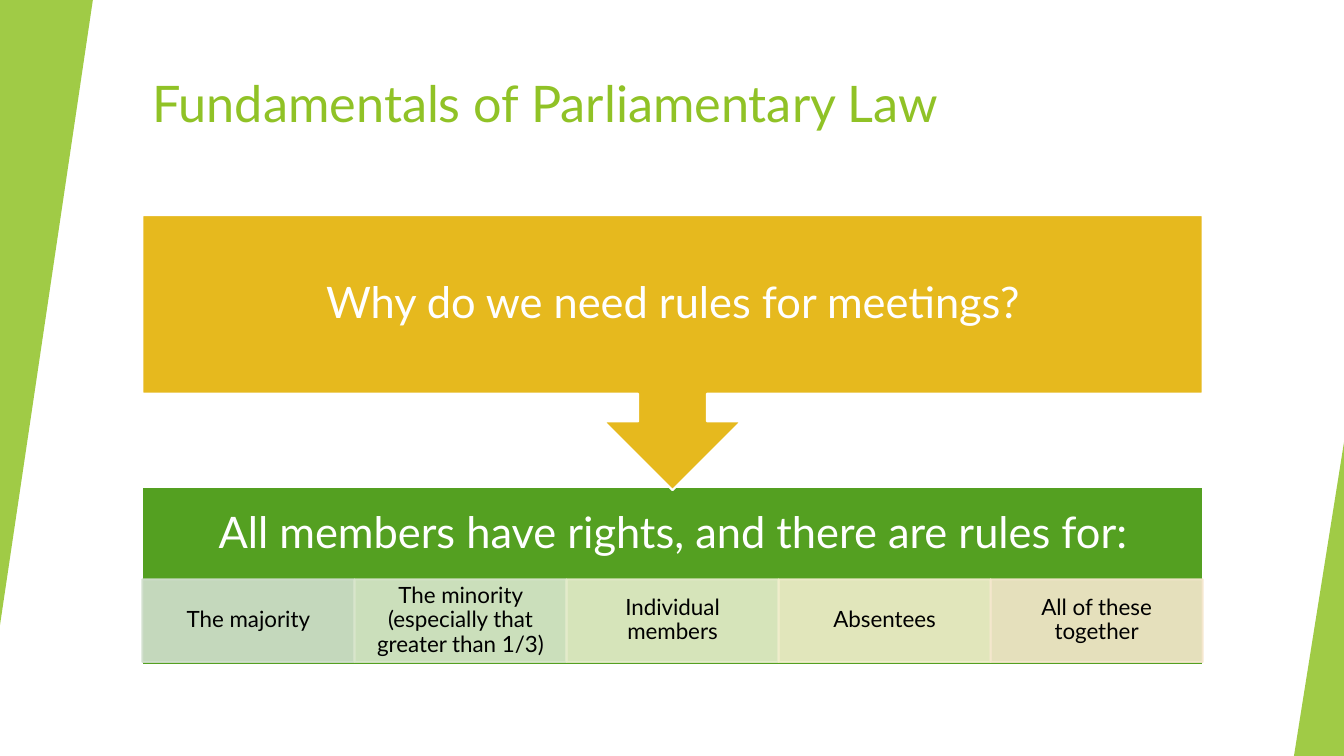
from pptx import Presentation
from pptx.dml.color import RGBColor
from pptx.enum.shapes import MSO_SHAPE as SHAPE
from pptx.enum.text import MSO_ANCHOR as ANCHOR, PP_ALIGN as ALIGN
from pptx.oxml.ns import qn
from pptx.util import Cm, Pt
from lxml import etree

LIME = RGBColor(0x90, 0xC2, 0x26)
GREEN = RGBColor(0x54, 0xA0, 0x21)
GOLD = RGBColor(0xE6, 0xB9, 0x1E)
WHITE = RGBColor(0xFF, 0xFF, 0xFF)
BLACK = RGBColor(0x00, 0x00, 0x00)
FONT = "Lato"

prs = Presentation()
prs.slide_width, prs.slide_height = Cm(33.87), Cm(19.05)
s = prs.slides.add_slide(prs.slide_layouts[5])


def add_filled(kind, x, y, w, h, fill, line=None, opacity=100):
    sp = s.shapes.add_shape(kind, Cm(x), Cm(y), Cm(w), Cm(h))
    sp.shadow.inherit = False
    sp.fill.solid()
    sp.fill.fore_color.rgb = fill
    if line is None:
        sp.line.fill.background()
    else:
        sp.line.color.rgb = line
        sp.line.width = Pt(1.5)
    if opacity < 100:
        for clr in sp._element.spPr.iter(qn("a:srgbClr")):
            etree.SubElement(clr, qn("a:alpha"), val=str(opacity * 1000))
    return sp


def write_text(sp, text, size, color, side, top, bottom):
    tf = sp.text_frame
    tf.word_wrap = True
    tf.vertical_anchor = ANCHOR.MIDDLE
    tf.margin_left = tf.margin_right = Cm(side)
    tf.margin_top, tf.margin_bottom = Cm(top), Cm(bottom)
    tf.text = text
    p = tf.paragraphs[0]
    p.alignment = ALIGN.CENTER
    p.line_spacing = 0.9
    p.font.size, p.font.name = Pt(size), FONT
    p.font.color.rgb = color


# Slanted side wedges
for x, y, w, h, angle in [(0, 0, 2.34, 15.75, 180), (32.61, 11.15, 1.26, 7.9, 0)]:
    sp = add_filled(SHAPE.ISOSCELES_TRIANGLE, x, y, w, h, LIME, opacity=85)
    sp.adjustments[0] = 1
    sp.rotation = angle

# Title
title = s.shapes.title
title.left, title.top, title.width, title.height = Cm(3.58), Cm(1.7), Cm(28.32), Cm(3.05)
tf = title.text_frame
tf.text = "Fundamentals of Parliamentary Law"
tf.vertical_anchor = ANCHOR.TOP
p = tf.paragraphs[0]
p.alignment = ALIGN.LEFT
r = p.runs[0]
r.font.size, r.font.name = Pt(36), FONT
r.font.color.rgb = LIME

# Answer panel, with its heading above the row of cells
LEFT, WIDTH = 3.59, 26.72
panel = add_filled(SHAPE.RECTANGLE, LEFT, 12.26, WIDTH, 4.5, GREEN, WHITE)
write_text(panel, "All members have rights, and there are rules for:", 31, WHITE, 0.61, 0.61, 2.68)

# Equal cells for the groups protected
groups = [
    ("The majority", RGBColor(0xD1, 0xDF, 0xCD)),
    ("The minority (especially that greater than 1/3)", RGBColor(0xD9, 0xE6, 0xCC)),
    ("Individual members", RGBColor(0xE5, 0xEC, 0xCB)),
    ("Absentees", RGBColor(0xF1, 0xEE, 0xCC)),
    ("All of these together", RGBColor(0xF5, 0xE7, 0xCD)),
]
cell_w = WIDTH / len(groups)
for i, (text, color) in enumerate(groups):
    cell = add_filled(SHAPE.RECTANGLE, LEFT + i * cell_w, 14.6, cell_w, 2.08, color, color, 90)
    write_text(cell, text, 16, BLACK, 0.3, 0.05, 0.05)

# Question with its arrow pointing to the answer
question = add_filled(SHAPE.DOWN_ARROW_CALLOUT, LEFT, 5.42, WIDTH, 6.93, GOLD, WHITE)
write_text(question, "Why do we need rules for meetings?", 31, WHITE, 0.61, 0.61, 0.61)

prs.save("out.pptx")
